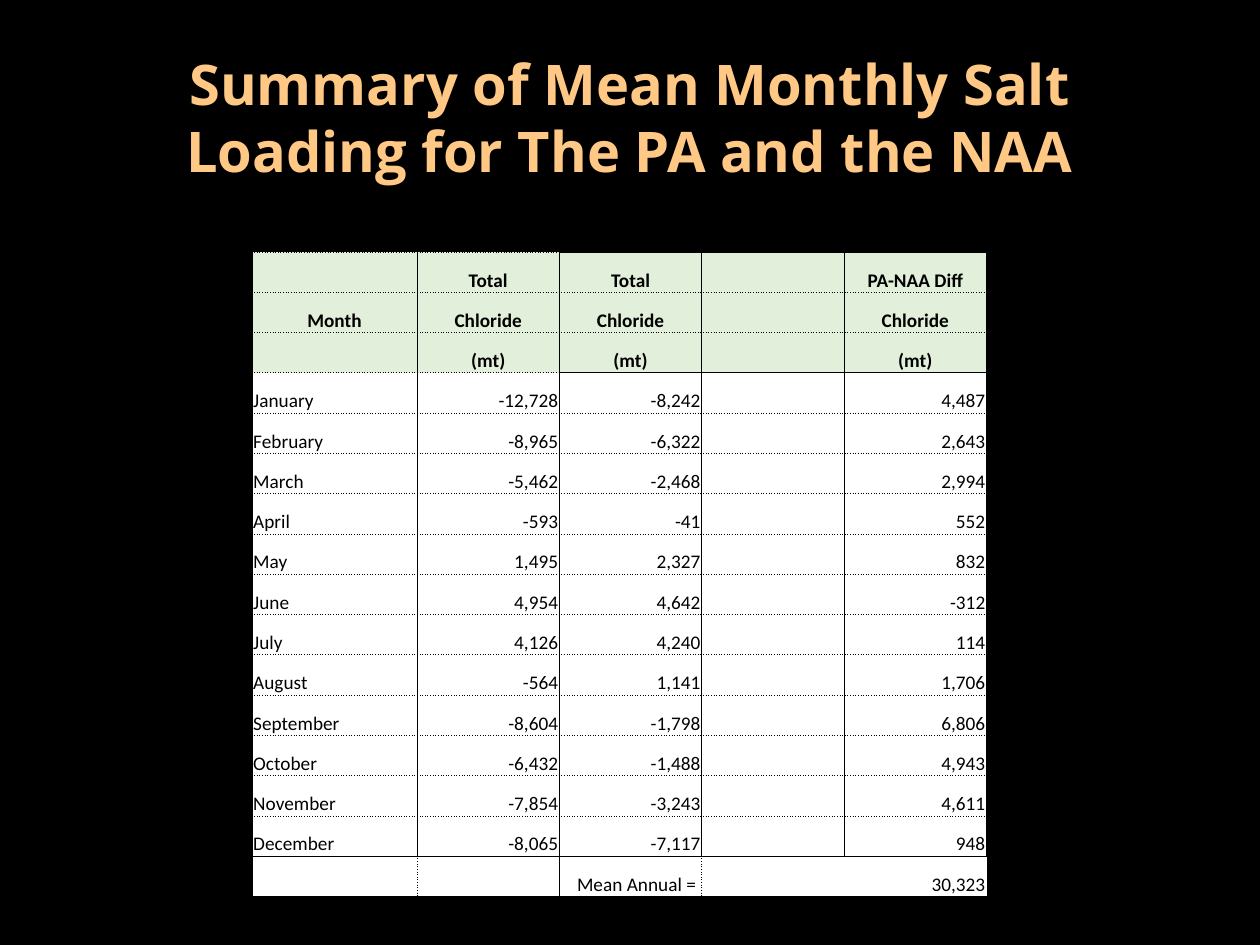
from lxml.etree import SubElement
from pptx import Presentation
from pptx.dml.color import RGBColor
from pptx.enum.text import MSO_ANCHOR as Anchor, PP_ALIGN as Align
from pptx.oxml.ns import qn
from pptx.util import Inches, Pt

COLORS = {"page": "000000", "title": "FFC985", "ink": "000000",
          "header": "E2EFDA", "body": "FFFFFF"}

ROWS = [
    ("", "Total", "Total", "", "PA-NAA Diff"),
    ("Month", "Chloride", "Chloride", "", "Chloride"),
    ("", "(mt)", "(mt)", "", "(mt)"),
    ("January", "-12,728", "-8,242", "", "4,487"),
    ("February", "-8,965", "-6,322", "", "2,643"),
    ("March", "-5,462", "-2,468", "", "2,994"),
    ("April", "-593", "-41", "", "552"),
    ("May", "1,495", "2,327", "", "832"),
    ("June", "4,954", "4,642", "", "-312"),
    ("July", "4,126", "4,240", "", "114"),
    ("August", "-564", "1,141", "", "1,706"),
    ("September", "-8,604", "-1,798", "", "6,806"),
    ("October", "-6,432", "-1,488", "", "4,943"),
    ("November", "-7,854", "-3,243", "", "4,611"),
    ("December", "-8,065", "-7,117", "", "948"),
    ("", "", "Mean Annual = ", "", "30,323"),
]
HEADER_ROWS = 3
TOTAL_ROW = len(ROWS) - 1
COLUMN_WIDTHS = [1.31] + [1.13] * 4
ROW_HEIGHT = 0.32
# Vertical rules of the total row, from the left edge to the right edge
TOTAL_RULES = ["solid", "sysDot", "solid", "sysDot", None, None]


def style_text(para, font_name, size, color, bold):
    for span in para.runs:
        span.font.name = font_name
        span.font.size = Pt(size)
        span.font.bold = bold
        span.font.color.rgb = RGBColor.from_string(COLORS[color])


def add_border(cell, side, dash):
    line = SubElement(cell._tc.get_or_add_tcPr(), qn(f"a:ln{side}"), w=str(Pt(0.5)))
    if dash is None:
        SubElement(line, qn("a:noFill"))
        return
    fill = SubElement(line, qn("a:solidFill"))
    SubElement(fill, qn("a:srgbClr"), val=COLORS["ink"])
    SubElement(line, qn("a:prstDash"), val=dash)


# Page
deck = Presentation()
deck.slide_width, deck.slide_height = Inches(10), Inches(7.5)
page = deck.slides.add_slide(deck.slide_layouts[6])
page.background.fill.solid()
page.background.fill.fore_color.rgb = RGBColor.from_string(COLORS["page"])

# Title
title_box = page.shapes.add_textbox(Inches(0.5), Inches(0.3), Inches(9), Inches(1.25))
frame = title_box.text_frame
frame.word_wrap = True
frame.vertical_anchor = Anchor.MIDDLE
frame.text = "Summary of Mean Monthly Salt Loading for The PA and the NAA"
frame.paragraphs[0].alignment = Align.CENTER
style_text(frame.paragraphs[0], "Open Sans", 32, "title", True)

# Salt loading table
table = page.shapes.add_table(
    len(ROWS), len(COLUMN_WIDTHS), Inches(2), Inches(2),
    Inches(sum(COLUMN_WIDTHS)), Inches(ROW_HEIGHT * len(ROWS))).table
table.first_row = table.horz_banding = False
for column, width in zip(table.columns, COLUMN_WIDTHS):
    column.width = Inches(width)

for r, values in enumerate(ROWS):
    table.rows[r].height = Inches(ROW_HEIGHT)
    is_header = r < HEADER_ROWS
    for c, value in enumerate(values):
        cell = table.cell(r, c)

        # Text
        cell.margin_left = cell.margin_right = cell.margin_top = Inches(0.01)
        cell.margin_bottom = 0
        cell.vertical_anchor = Anchor.BOTTOM
        cell.text_frame.text = value
        para = cell.text_frame.paragraphs[0]
        if is_header:
            para.alignment = Align.CENTER
        else:
            para.alignment = Align.RIGHT if c else Align.LEFT
        style_text(para, "Calibri", 11, "ink", is_header)
        if not value:
            SubElement(para._p, qn("a:endParaRPr"), sz="1100")

        # Borders: solid around the header from the third column and above the total
        solid_edges = {TOTAL_ROW} | ({0, HEADER_ROWS} if c >= 2 else set())
        top, bottom = ("solid" if edge in solid_edges else "sysDot" for edge in (r, r + 1))
        left = right = "solid"
        if r == TOTAL_ROW:
            left, right = TOTAL_RULES[c:c + 2]
            bottom = None
        for side, dash in zip("LRTB", (left, right, top, bottom)):
            add_border(cell, side, dash)

        # Fill
        cell.fill.solid()
        cell.fill.fore_color.rgb = RGBColor.from_string(
            COLORS["header" if is_header else "body"])

deck.save("out.pptx")
